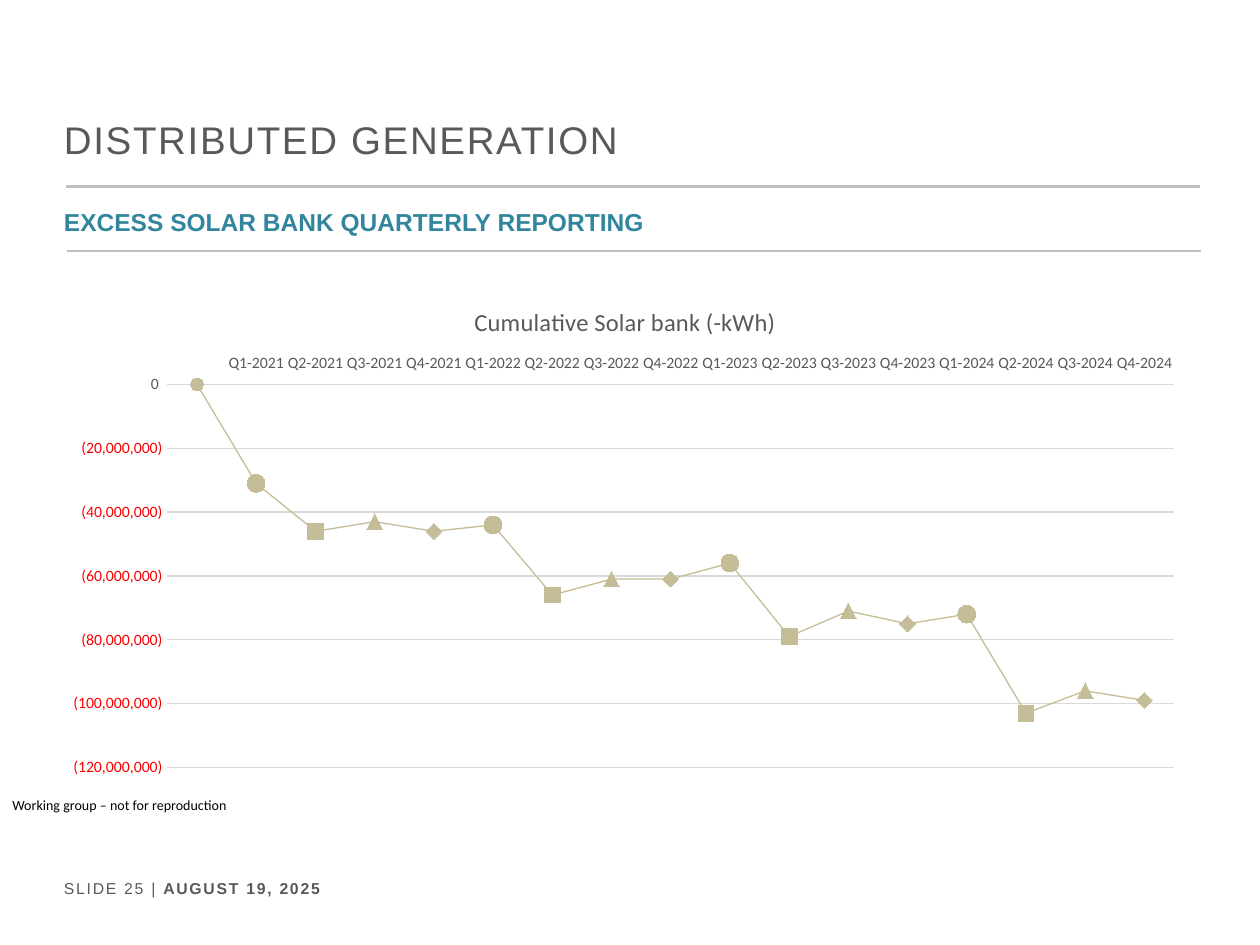
from lxml.etree import SubElement
from pptx import Presentation
from pptx.chart.data import CategoryChartData
from pptx.dml.color import RGBColor as RGB
from pptx.enum.chart import (XL_CHART_TYPE as ChartType, XL_MARKER_STYLE as Marker,
                             XL_TICK_LABEL_POSITION as LabelPos, XL_TICK_MARK as Tick)
from pptx.enum.shapes import MSO_CONNECTOR as Connector
from pptx.enum.text import MSO_ANCHOR as Anchor
from pptx.oxml import parse_xml
from pptx.oxml.ns import nsdecls, qn
from pptx.util import Cm, Pt

# Content
TITLE = "DISTRIBUTED GENERATION"
SUBTITLE = "EXCESS SOLAR BANK QUARTERLY REPORTING"
FOOTER = [("SLIDE 25 | ", False), ("AUGUST 19, 2025", True)]
NOTICE = "Working group – not for reproduction"
CHART_TITLE = "Cumulative Solar bank (-kWh)"
QUARTERS = [""] + [f"Q{q}-{year}" for year in range(2021, 2025) for q in range(1, 5)]
BANK_MILLIONS = [0, -31, -46, -43, -46, -44, -66, -61, -61,
                 -56, -79, -71, -75, -72, -103, -96, -99]
QUARTER_MARKERS = [(Marker.CIRCLE, 10), (Marker.SQUARE, 9),
                   (Marker.TRIANGLE, 9), (Marker.DIAMOND, 9)]
MILLION = 1_000_000

THEME = {
    "head": "Arial", "body": "Calibri",
    "grey": RGB.from_string("595959"), "teal": RGB.from_string("31859C"),
    "black": RGB.from_string("000000"), "rule": RGB.from_string("BFBFBF"),
    "grid": RGB.from_string("D9D9D9"), "sand": RGB.from_string("C4BD97"),
    "title": Pt(22), "subtitle": Pt(14), "footer": Pt(9), "notice": Pt(8),
    "chart_title": Pt(14), "axis": Pt(9),
}


def style(font, face, size, color, bold=False):
    font.name, font.size, font.bold = THEME[face], THEME[size], bold
    font.color.rgb = THEME[color]


def add_text(slide, box, runs, face, size, color, spacing=0, anchor=Anchor.TOP):
    frame = slide.shapes.add_textbox(*map(Cm, box)).text_frame
    frame.word_wrap = True
    frame.vertical_anchor = anchor
    line = frame.paragraphs[0]
    style(line.font, face, size, color)
    for words, bold in runs:
        run = line.add_run()
        run.text = words
        run.font.bold = bold
        style(run.font, face, size, color, bold)
        if spacing:
            run.font._element.set("spc", str(spacing * 100))
    return line


def add_rule(slide, left, top, width):
    rule = slide.shapes.add_connector(Connector.STRAIGHT, Cm(left), Cm(top),
                                      Cm(left + width), Cm(top))
    rule.line.color.rgb, rule.line.width = THEME["rule"], Pt(1.5)
    SubElement(rule._element.spPr, qn("a:effectLst"))


def fill_marker(marker, shape, size):
    marker.style, marker.size = shape, size
    marker.format.fill.solid()
    marker.format.fill.fore_color.rgb = THEME["sand"]
    marker.format.line.color.rgb = THEME["sand"]


def place_plot(chart, **fractions):
    """Fix the inner plot area as fractions of the chart."""
    parts = "".join(f'<c:{key} val="{value}"/>' for key, value in fractions.items())
    area = chart._chartSpace.chart.plotArea
    for old in area.findall(qn("c:layout")):
        area.remove(old)
    area.insert(0, parse_xml(
        f'<c:layout {nsdecls("c")}><c:manualLayout><c:layoutTarget val="inner"/>'
        f'<c:xMode val="edge"/><c:yMode val="edge"/>{parts}</c:manualLayout></c:layout>'))


def add_bank_chart(slide, box):
    bank = CategoryChartData(number_format="#,##0")
    bank.categories = QUARTERS
    bank.add_series("Series 1", [value * MILLION for value in BANK_MILLIONS])
    chart = slide.shapes.add_chart(ChartType.LINE_MARKERS_STACKED, *map(Cm, box), bank).chart
    chart.has_legend = False
    chart.font.name, chart.font.size = THEME["body"], Pt(10)
    chart.font.color.rgb = THEME["black"]
    chart.has_title = True
    heading = chart.chart_title.text_frame
    heading.text = CHART_TITLE
    style(heading.paragraphs[0].font, "body", "chart_title", "grey")
    chart.chart_title.include_in_layout = False
    place_plot(chart, x=0.1, y=0.2, w=0.88, h=0.76)

    # Axes
    quarters, amounts = chart.category_axis, chart.value_axis
    for axis in (quarters, amounts):
        axis.major_tick_mark = axis.minor_tick_mark = Tick.NONE
        style(axis.tick_labels.font, "body", "axis", "grey")
    quarters.tick_label_position = LabelPos.HIGH
    amounts.minimum_scale, amounts.maximum_scale = -120 * MILLION, 0
    amounts.major_unit = 20 * MILLION
    amounts.tick_labels.number_format = r"#,##0_);[Red]\(#,##0\)"
    amounts.tick_labels.number_format_is_linked = False
    amounts.format.line.fill.background()
    for line in (quarters.format.line, amounts.major_gridlines.format.line):
        line.color.rgb, line.width = THEME["grid"], Pt(0.75)

    # Series: one marker shape per quarter of the year
    plot = chart.plots[0]
    plot.vary_by_categories = False
    series = plot.series[0]
    series.smooth = False
    series.format.line.color.rgb, series.format.line.width = THEME["sand"], Pt(0.75)
    fill_marker(series.marker, Marker.CIRCLE, 7)
    for index in range(1, len(QUARTERS)):
        point = series.points[index]
        fill_marker(point.marker, *QUARTER_MARKERS[(index - 1) % 4])
        point.format.line.color.rgb, point.format.line.width = THEME["sand"], Pt(0.75)


def main():
    deck = Presentation()
    deck.slide_width, deck.slide_height = Cm(25.4), Cm(19.05)
    slide = deck.slides.add_slide(deck.slide_layouts[6])

    # Rules and footer
    add_rule(slide, 1.33, 3.76, 22.86)
    add_rule(slide, 1.35, 5.06, 22.86)
    add_text(slide, (1.04, 17.58, 6.81, 0.64), FOOTER, "head", "footer", "grey", spacing=1)

    # Headings
    add_text(slide, (1.04, 2.06, 23.14, 1.47), [(TITLE, False)],
             "head", "title", "grey", spacing=1, anchor=Anchor.MIDDLE)
    subtitle = add_text(slide, (1.04, 3.81, 23.11, 1.19), [(SUBTITLE, True)],
                        "head", "subtitle", "teal", anchor=Anchor.MIDDLE)
    subtitle.line_spacing = 1.2

    # Chart and notice
    add_bank_chart(slide, (1.07, 5.72, 23.06, 10.16))
    add_text(slide, (0, 15.93, 4.88, 0.61), [(NOTICE, False)], "body", "notice", "black")

    deck.save("out.pptx")


if __name__ == "__main__":
    main()
